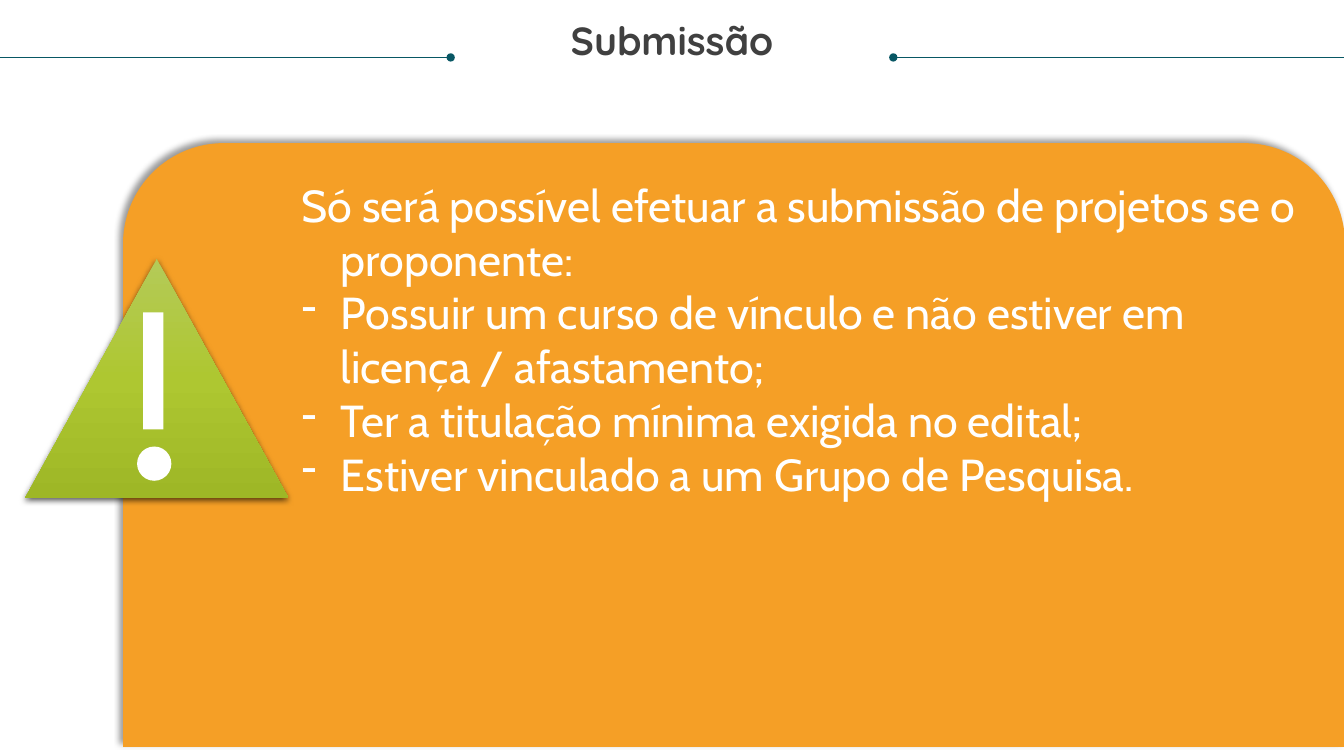
from pptx import Presentation
from pptx.dml.color import RGBColor
from pptx.enum.shapes import MSO_CONNECTOR, MSO_SHAPE
from pptx.enum.text import MSO_ANCHOR, PP_ALIGN
from pptx.oxml.ns import qn
from pptx.util import Inches, Pt
from lxml import etree

WHITE = "FFFFFF"
TEAL = "085764"
ORANGE = "F59F26"
GREENS = [(0, "B4CA58"), (50, "AEC731"), (100, "9EB726")]

INTRODUCTION = "Só será possível efetuar a submissão de projetos se o proponente:"
CONDITIONS = [
    "Possuir um curso de vínculo e não estiver em licença / afastamento;",
    "Ter a titulação mínima exigida no edital;",
    "Estiver vinculado a um Grupo de Pesquisa.",
]


def color(value):
    return RGBColor.from_string(value)


def add_element(parent, tag, **attributes):
    element = etree.SubElement(parent, qn(tag))
    for name, value in attributes.items():
        element.set(name, str(value))
    return element


def format_run(run, font_name, size, font_color, bold=False):
    run.font.name = font_name
    run.font.size = Pt(size)
    run.font.bold = bold
    run.font.color.rgb = color(font_color)


def add_filled_shape(shapes, kind, left, top, width, height, fill):
    shape = shapes.add_shape(kind, Inches(left), Inches(top), Inches(width), Inches(height))
    shape.fill.solid()
    shape.fill.fore_color.rgb = color(fill)
    shape.line.fill.background()
    shape.shadow.inherit = False
    return shape


def add_shadow(shape, opacity, blur, distance, angle):
    effects = shape.element.spPr.find(qn("a:effectLst"))
    shadow = add_element(effects, "a:outerShdw", blurRad=Pt(blur), dist=Pt(distance),
                         dir=angle * 60000, algn="ctr", rotWithShape=0)
    black = add_element(shadow, "a:srgbClr", val="000000")
    add_element(black, "a:alpha", val=opacity * 1000)


def set_vertical_gradient(shape, stops):
    shape.fill.gradient()
    shape.fill.gradient_angle = 270
    stop_list = shape.element.spPr.find(qn("a:gradFill")).find(qn("a:gsLst"))
    for stop in list(stop_list):
        stop_list.remove(stop)
    for position, value in stops:
        stop = add_element(stop_list, "a:gs", pos=position * 1000)
        add_element(stop, "a:srgbClr", val=value)


def add_title(slide, text):
    box = slide.shapes.add_textbox(Inches(0.25), Inches(0.21), Inches(12.83), Inches(0.85))
    frame = box.text_frame
    frame.word_wrap = True
    frame.margin_left = frame.margin_right = frame.margin_top = frame.margin_bottom = 0
    frame.text = text
    paragraph = frame.paragraphs[0]
    paragraph.alignment = PP_ALIGN.CENTER
    paragraph.line_spacing = 0.9
    format_run(paragraph.runs[0], "Quicksand", 28, "404040", bold=True)


def add_title_rule(slide, outer, inner):
    """Draw a rule from the slide edge to a dot beside the title."""
    line = slide.shapes.add_connector(MSO_CONNECTOR.STRAIGHT, Inches(outer), Inches(0.57),
                                      Inches(inner), Inches(0.57))
    line.line.color.rgb = color(TEAL)
    line.line.width = Pt(0.5)
    add_element(line.line._get_or_add_ln(), "a:tailEnd", type="oval")
    add_element(line.element.spPr, "a:effectLst")


def format_item(paragraph, bullet=None):
    paragraph.level = 1
    paragraph.alignment = PP_ALIGN.LEFT
    properties = paragraph._p.get_or_add_pPr()
    properties.set("marL", str(Inches(1.77)))
    properties.set("indent", str(Inches(-0.39)))
    if bullet:
        add_element(properties, "a:buChar", char=bullet)
    else:
        add_element(properties, "a:buNone")
    format_run(paragraph.runs[0], "Cabin", 32, WHITE)


def add_panel(slide):
    panel = add_filled_shape(slide.shapes, MSO_SHAPE.ROUND_2_SAME_RECTANGLE,
                             1.22, 1.42, 12.12, 5.99, ORANGE)
    add_shadow(panel, 40, 4, 3, 225)
    frame = panel.text_frame
    frame.word_wrap = True
    frame.vertical_anchor = MSO_ANCHOR.TOP
    frame.text = "\n".join([INTRODUCTION] + CONDITIONS)
    introduction, *conditions = frame.paragraphs
    format_item(introduction)
    for condition in conditions:
        format_item(condition, bullet="-")


def add_warning_sign(slide):
    sign = slide.shapes.add_group_shape().shapes
    triangle = add_filled_shape(sign, MSO_SHAPE.FLOWCHART_EXTRACT,
                                0.25, 2.57, 2.61, 2.37, GREENS[0][1])
    set_vertical_gradient(triangle, GREENS)
    add_shadow(triangle, 63, 4.5, 1.5, 90)
    # Exclamation mark
    add_filled_shape(sign, MSO_SHAPE.RECTANGLE, 1.42, 3.1, 0.2, 1.16, WHITE)
    add_filled_shape(sign, MSO_SHAPE.FLOWCHART_CONNECTOR, 1.36, 4.43, 0.34, 0.34, WHITE)


def main():
    presentation = Presentation()
    presentation.slide_width = Inches(13.33)
    presentation.slide_height = Inches(7.5)
    slide = presentation.slides.add_slide(presentation.slide_layouts[6])

    # Heading
    add_title(slide, "Submissão")
    add_title_rule(slide, 0, 4.47)
    add_title_rule(slide, 13.33, 8.86)

    # Conditions and warning
    add_panel(slide)
    add_warning_sign(slide)

    presentation.save("out.pptx")


if __name__ == "__main__":
    main()
